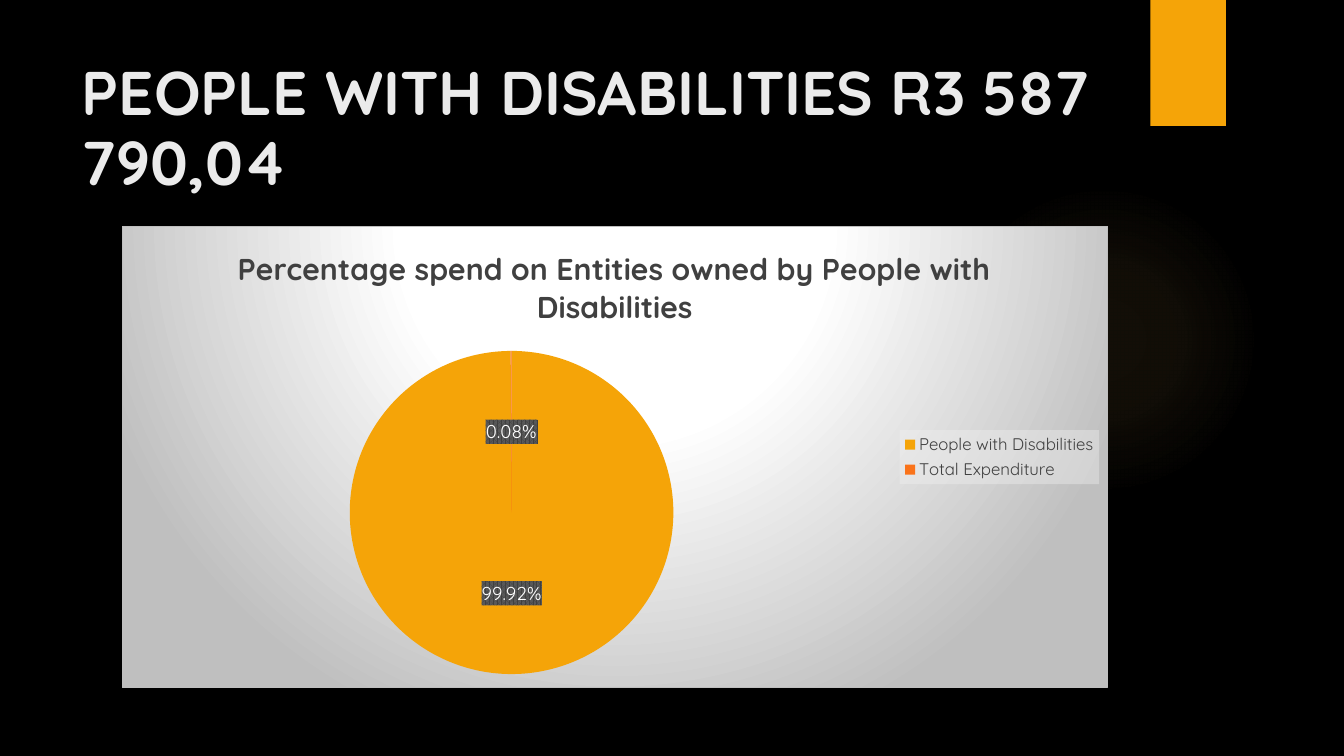
from dataclasses import dataclass

from lxml import etree
from pptx import Presentation
from pptx.chart.data import CategoryChartData
from pptx.dml.color import RGBColor
from pptx.enum.chart import XL_CHART_TYPE, XL_LABEL_POSITION, XL_LEGEND_POSITION
from pptx.enum.shapes import MSO_SHAPE
from pptx.enum.text import MSO_ANCHOR, PP_ALIGN
from pptx.oxml import parse_xml
from pptx.oxml.ns import nsdecls, qn
from pptx.util import Inches, Pt


@dataclass(frozen=True)
class Theme:
    font: str = "Quicksand"
    background: str = "000000"
    heading: str = "EBEBEB"
    accent: str = "F5A408"
    second_accent: str = "FA731A"
    glow: str = "FAC96A"
    dark: str = "404040"
    label_stripe: str = "595959"
    light: str = "FFFFFF"
    grey: str = "BFBFBF"
    legend_back: str = "F2F2F2"
    heading_size: float = 44
    chart_title_size: float = 21.6
    label_size: float = 13.3
    legend_size: float = 12


THEME = Theme()


def rgb(value):
    return RGBColor.from_string(value)


def style_font(font, size, color, bold=False):
    font.name = THEME.font
    font.size = Pt(size)
    font.bold = bold
    font.color.rgb = rgb(color)


def write_text(frame, text, *, size, color, bold=False, align=None, spacing=None):
    frame.text = text
    paragraph = frame.paragraphs[0]
    paragraph.alignment = align
    paragraph.line_spacing = spacing
    style_font(paragraph.runs[0].font, size, color, bold)


def color_xml(value, alpha=100):
    return f'<a:srgbClr val="{value}"><a:alpha val="{alpha * 1000}"/></a:srgbClr>'


def radial_fill_xml(stops, top, bottom):
    """Circular gradient; stops are (position, colour, opacity) in percent."""
    stop_list = "".join(
        f'<a:gs pos="{position * 1000}">{color_xml(value, alpha)}</a:gs>'
        for position, value, alpha in stops)
    return (f'<a:gradFill {nsdecls("a")} rotWithShape="1"><a:gsLst>{stop_list}</a:gsLst>'
            f'<a:path path="circle"><a:fillToRect l="50000" t="{top * 1000}" '
            f'r="50000" b="{bottom * 1000}"/></a:path></a:gradFill>')


def fill_chart_part(text_properties, fill_xml, line_xml="<a:ln><a:noFill/></a:ln>"):
    """Give a chart part its fill, placed just before its text properties."""
    text_properties.addprevious(parse_xml(
        f'<c:spPr {nsdecls("c", "a")}>{fill_xml}{line_xml}</c:spPr>'))


def add_plain_shape(slide, kind, box, color):
    shape = slide.shapes.add_shape(kind, *map(Inches, box))
    shape.shadow.inherit = False
    shape.fill.solid()
    shape.fill.fore_color.rgb = rgb(color)
    shape.line.fill.background()
    return shape


def add_decoration(slide, glow_box, tab_box):
    glow = add_plain_shape(slide, MSO_SHAPE.OVAL, glow_box, THEME.glow)
    solid_fill = glow.element.spPr.find(qn("a:solidFill"))
    stops = [(0, THEME.glow, 7), (36, THEME.glow, 6), (69, THEME.glow, 0)]
    solid_fill.getparent().replace(
        solid_fill, parse_xml(radial_fill_xml(stops, 50, 50)))
    add_plain_shape(slide, MSO_SHAPE.RECTANGLE, tab_box, THEME.accent)


def place_heading(slide, box, text):
    heading = slide.shapes.title
    heading.left, heading.top, heading.width, heading.height = map(Inches, box)
    frame = heading.text_frame
    frame.word_wrap = True
    frame.vertical_anchor = MSO_ANCHOR.TOP
    frame.margin_top = Inches(0.09)
    write_text(frame, text, size=THEME.heading_size, color=THEME.heading,
               bold=True, align=PP_ALIGN.LEFT, spacing=0.95)


def set_plot_layout(chart, **fractions):
    """Fix the plot's inner area as fractions of the chart's box."""
    plot_area = chart.element.find(".//" + qn("c:plotArea"))
    for old_layout in plot_area.findall(qn("c:layout")):
        plot_area.remove(old_layout)
    layout = parse_xml(f'<c:layout {nsdecls("c")}/>')
    manual = etree.SubElement(layout, qn("c:manualLayout"))
    settings = {"layoutTarget": "inner", "xMode": "edge", "yMode": "edge", **fractions}
    for name, value in settings.items():
        etree.SubElement(manual, qn(f"c:{name}")).set("val", str(value))
    plot_area.insert(0, layout)


def add_spend_chart(slide, box, title, shares):
    data = CategoryChartData(number_format="0.00")
    data.categories = list(shares)
    data.add_series("Series 1", list(shares.values()))
    chart = slide.shapes.add_chart(XL_CHART_TYPE.PIE, *map(Inches, box), data).chart
    style_font(chart.font, 10, THEME.light)
    chart.has_title = True
    write_text(chart.chart_title.text_frame, title, size=THEME.chart_title_size,
               color=THEME.dark, bold=True)
    chart.chart_title.include_in_layout = False
    set_plot_layout(chart, x=0.23, y=0.27, w=0.33, h=0.7)

    plot = chart.plots[0]
    plot.vary_by_categories = True
    for index, color in enumerate((THEME.accent, THEME.second_accent)):
        slice_format = plot.series[0].points[index].format
        slice_format.fill.solid()
        slice_format.fill.fore_color.rgb = rgb(color)
        slice_format.line.fill.background()

    plot.has_data_labels = True
    labels = plot.data_labels
    labels.show_percentage = True
    labels.show_value = False
    labels.number_format = "0.00%"
    labels.number_format_is_linked = False
    labels.position = XL_LABEL_POSITION.CENTER
    style_font(labels.font, THEME.label_size, THEME.light)

    chart.has_legend = True
    chart.legend.position = XL_LEGEND_POSITION.RIGHT
    chart.legend.include_in_layout = False
    style_font(chart.legend.font, THEME.legend_size, THEME.dark)

    def text_properties(part):
        return chart.element.find(f".//{qn(part)}/{qn('c:txPr')}")

    fill_chart_part(
        text_properties("c:dLbls"),
        f'<a:pattFill prst="pct75"><a:fgClr>{color_xml(THEME.dark)}</a:fgClr>'
        f'<a:bgClr>{color_xml(THEME.label_stripe)}</a:bgClr></a:pattFill>')
    fill_chart_part(
        text_properties("c:legend"),
        f"<a:solidFill>{color_xml(THEME.legend_back, 39)}</a:solidFill>")
    backdrop = [(0, THEME.light, 100), (39, THEME.light, 100), (100, THEME.grey, 100)]
    fill_chart_part(
        chart.element.find(qn("c:txPr")),
        radial_fill_xml(backdrop, -80, 180),
        f'<a:ln w="{Pt(0.75)}"><a:solidFill>{color_xml(THEME.grey)}</a:solidFill></a:ln>')


def main():
    deck = Presentation()
    deck.slide_width, deck.slide_height = Inches(13.33), Inches(7.5)
    slide = deck.slides.add_slide(deck.slide_layouts.get_by_name("Title Only"))
    slide.background.fill.solid()
    slide.background.fill.fore_color.rgb = rgb(THEME.background)
    add_decoration(slide, (9.41, 1.83, 3.08, 3.08), (11.41, 0, 0.75, 1.25))
    place_heading(slide, (0.71, 0.5, 10.29, 1.53),
                  "PEOPLE WITH DISABILITIES R3 587 790,04")
    add_spend_chart(
        slide, (1.21, 2.24, 9.78, 4.59),
        "Percentage spend on Entities owned by People with Disabilities",
        {"People with Disabilities": 99.92, "Total Expenditure": 0.08})
    deck.save("out.pptx")


if __name__ == "__main__":
    main()
